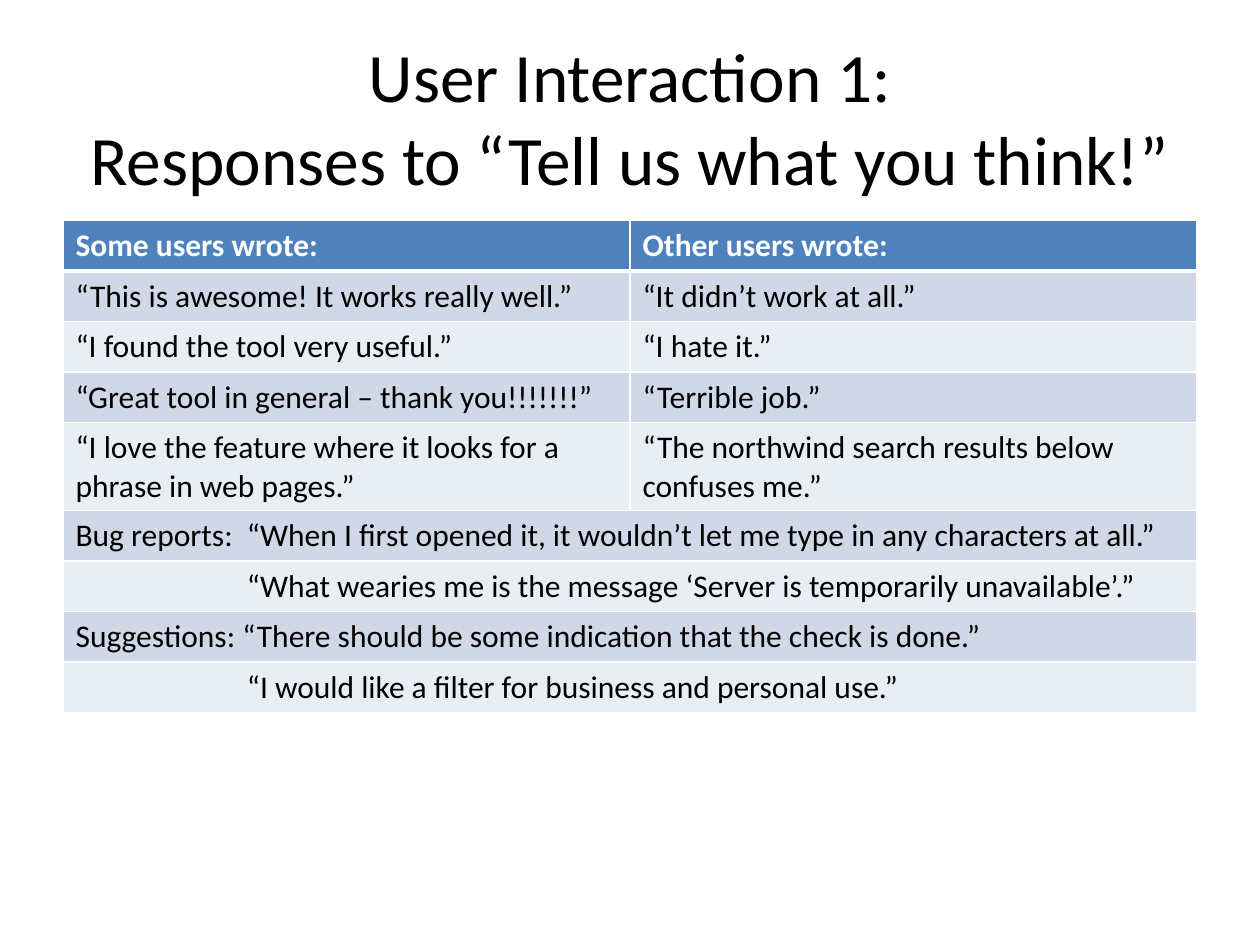
from lxml import etree
from pptx import Presentation
from pptx.dml.color import RGBColor
from pptx.enum import text
from pptx.oxml import ns
from pptx.util import Inches, Pt

FONT = "Calibri"
BLACK = RGBColor(0x00, 0x00, 0x00)
WHITE = RGBColor(0xFF, 0xFF, 0xFF)
HEADER_BLUE = RGBColor(0x4F, 0x81, 0xBD)
BANDS = (RGBColor(0xD0, 0xD8, 0xE8), RGBColor(0xE9, 0xED, 0xF4))

TITLE = "User Interaction 1:\vResponses to “Tell us what you think!”"
RESPONSES = [
    ("Some users wrote:", "Other users wrote:"),
    ("“This is awesome! It works really well.”", "“It didn’t work at all.”"),
    ("“I found the tool very useful.”", "“I hate it.”"),
    ("“Great tool in general – thank you!!!!!!!”", "“Terrible job.”"),
    ("“I love the feature where it looks for a phrase in web pages.”",
     "“The northwind search results below confuses me.”"),
    ("Bug reports:\t“When I first opened it, it wouldn’t let me type in any characters at all.”",),
    ("“What wearies me is the message ‘Server is temporarily unavailable’.”",),
    ("Suggestions: “There should be some indication that the check is done.”",),
    ("“I would like a filter for business and personal use.”",),
]
CONTINUATION_ROWS = (6, 8)
QUOTE_INDENT = 1.36
CELL_MARGIN = 0.1


def style_paragraph(paragraph, size, color, bold=False):
    font = paragraph.font
    font.name, font.size, font.bold = FONT, Pt(size), bold
    font.color.rgb = color


def add_title(slide):
    title = slide.shapes.add_textbox(Inches(0.5), Inches(0.3), Inches(9), Inches(1.25))
    frame = title.text_frame
    frame.word_wrap = True
    frame.vertical_anchor = text.MSO_ANCHOR.MIDDLE
    heading = frame.paragraphs[0]
    heading.text = TITLE
    heading.alignment = text.PP_ALIGN.CENTER
    style_paragraph(heading, 39.6, BLACK)


def set_borders(cell, widths):
    properties = cell._tc.get_or_add_tcPr()
    for side, width in widths.items():
        line = etree.SubElement(properties, ns.qn(f"a:ln{side}"), w=str(Pt(width)))
        fill = etree.SubElement(line, ns.qn("a:solidFill"))
        etree.SubElement(fill, ns.qn("a:srgbClr"), val=str(WHITE))


def set_tab_stop(paragraph, position):
    stops = etree.Element(ns.qn("a:tabLst"))
    etree.SubElement(stops, ns.qn("a:tab"), pos=str(Inches(position)), algn="l")
    paragraph._p.get_or_add_pPr().insert(0, stops)


def style_cell(cell, row):
    set_borders(cell, {"L": 1, "R": 1, "T": 3 if row == 1 else 1, "B": 3 if row == 0 else 1})
    cell.fill.solid()
    cell.fill.fore_color.rgb = BANDS[(row - 1) % 2] if row else HEADER_BLUE


def fill_cell(cell, row, response):
    indent = QUOTE_INDENT if row in CONTINUATION_ROWS else 0
    cell.margin_left = Inches(CELL_MARGIN + indent)
    paragraph = cell.text_frame.paragraphs[0]
    paragraph.text = response
    if "\t" in response:
        set_tab_stop(paragraph, QUOTE_INDENT)
    style_paragraph(paragraph, 18, BLACK if row else WHITE, bold=row == 0)


def add_responses(slide):
    frame = slide.shapes.add_table(
        len(RESPONSES), 2, Inches(0.5), Inches(1.75), Inches(9), Inches(0.4 * len(RESPONSES)))
    table = frame.table
    for row, responses in enumerate(RESPONSES):
        for column in range(2):
            style_cell(table.cell(row, column), row)
        if len(responses) == 1:
            table.cell(row, 0).merge(table.cell(row, 1))
        for column, response in enumerate(responses):
            fill_cell(table.cell(row, column), row, response)


def main():
    presentation = Presentation()
    presentation.slide_width, presentation.slide_height = Inches(10), Inches(7.5)
    slide = presentation.slides.add_slide(presentation.slide_layouts[6])
    add_title(slide)
    add_responses(slide)
    presentation.save("out.pptx")


if __name__ == "__main__":
    main()
